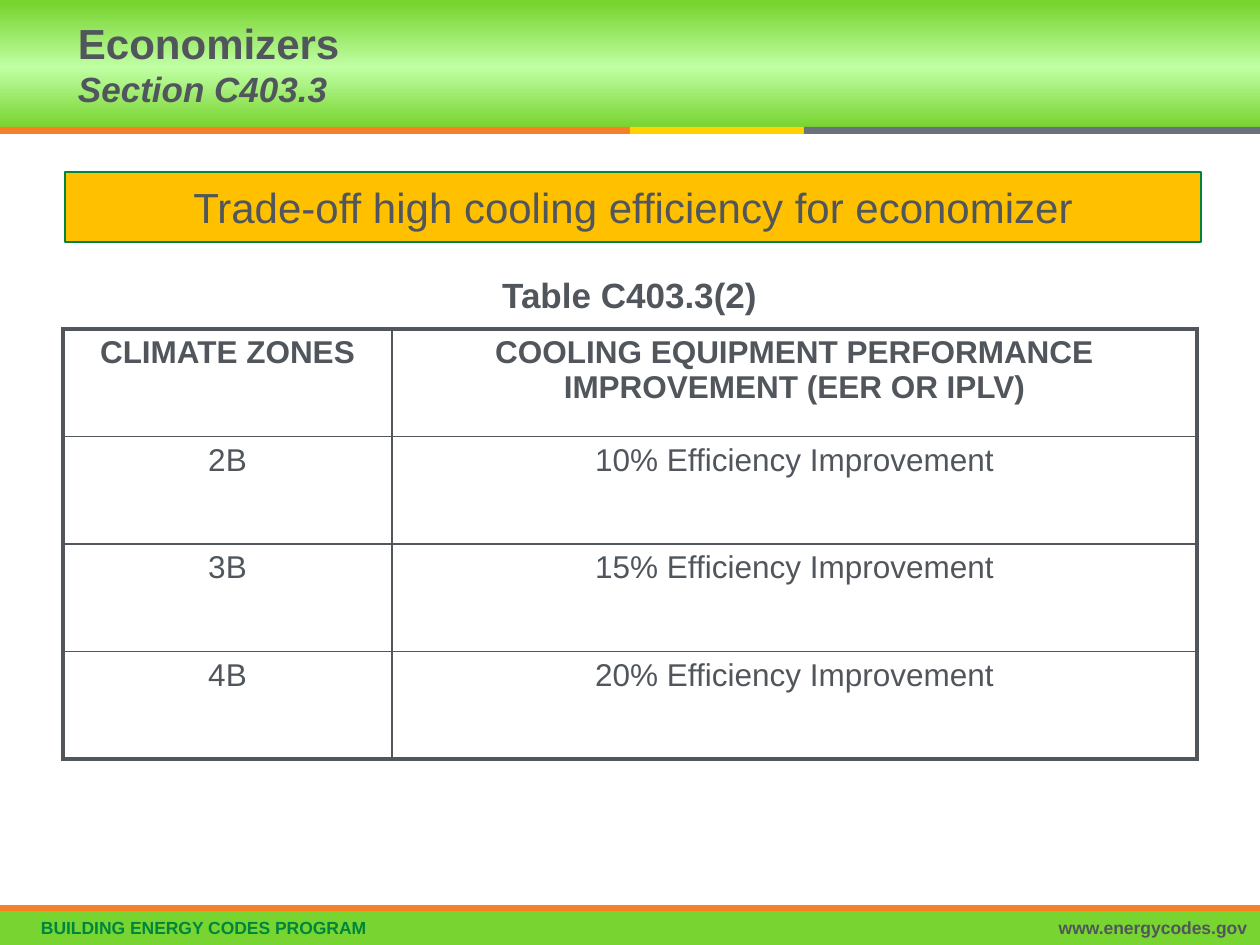
import copy

import lxml.etree
import pptx
import pptx.dml.color
import pptx.enum.shapes
import pptx.enum.text
import pptx.oxml.ns
import pptx.util

EMU_PER_PX = pptx.util.Inches(1) / 126
ALIGN = pptx.enum.text.PP_ALIGN
ANCHOR = pptx.enum.text.MSO_ANCHOR


def px(length):
    return pptx.util.Emu(round(length * EMU_PER_PX))


def color(hex_string):
    return pptx.dml.color.RGBColor.from_string(hex_string)


class SlideBuilder:
    FONT = "Arial"
    TEXT = "50565C"
    GREEN, DARK_GREEN, PALE_GREEN = "78D430", "00853F", "C0FFA4"
    ORANGE, YELLOW, GRAY, AMBER = "F58025", "FFD200", "6A737B", "FFC000"

    def __init__(self, slide):
        self.slide = slide

    def style_run(self, run, size, bold=False, italic=False, hex_string=TEXT):
        run.font.name = self.FONT
        run.font.size = pptx.util.Pt(size)
        run.font.bold = bold
        run.font.italic = italic
        run.font.color.rgb = color(hex_string)

    def bar(self, left, top, width, height, fill, line=None):
        shape = self.slide.shapes.add_shape(
            pptx.enum.shapes.MSO_SHAPE.RECTANGLE,
            px(left), px(top), px(width), px(height))
        shape.shadow.inherit = False
        shape.fill.solid()
        shape.fill.fore_color.rgb = color(fill)
        if line:
            shape.line.color.rgb = color(line)
            shape.line.width = pptx.util.Pt(0.75)
        else:
            shape.line.fill.background()
        return shape

    def gradient_bar(self, left, top, width, height, stops):
        """Vertical gradient, with (percent, colour) stops from the bottom up."""
        fill = self.bar(left, top, width, height, stops[0][1]).fill
        fill.gradient()
        fill.gradient_angle = 90
        first = fill.gradient_stops[0]._gs
        for _ in range(len(stops) - len(fill.gradient_stops)):
            first.addnext(copy.deepcopy(first))
        for stop, (percent, hex_string) in zip(fill.gradient_stops, stops):
            stop.position = percent / 100
            stop.color.rgb = color(hex_string)

    def set_text(self, shape, text, size, align=ALIGN.LEFT, **style):
        frame = shape.text_frame
        frame.word_wrap = True
        frame.vertical_anchor = ANCHOR.MIDDLE
        frame.margin_left = frame.margin_right = 0
        frame.margin_top = frame.margin_bottom = 0
        paragraph = frame.paragraphs[0]
        paragraph.text = text
        paragraph.alignment = align
        for run in paragraph.runs:
            self.style_run(run, size, **style)
        return paragraph

    def label(self, left, top, width, height, text, size, **style):
        box = self.slide.shapes.add_textbox(px(left), px(top), px(width), px(height))
        return self.set_text(box, text, size, **style)

    def cell_borders(self, cell, widths):
        """Draw the left, right, top and bottom borders, with widths in points."""
        properties = cell._tc.get_or_add_tcPr()
        qn = pptx.oxml.ns.qn
        for side, width in zip("LRTB", widths):
            line = lxml.etree.SubElement(
                properties, qn(f"a:ln{side}"), w=str(pptx.util.Pt(width)))
            fill = lxml.etree.SubElement(line, qn("a:solidFill"))
            lxml.etree.SubElement(fill, qn("a:srgbClr"), val=self.TEXT)

    def table(self, left, top, height, column_widths, rows):
        row_count, column_count = len(rows), len(column_widths)
        table = self.slide.shapes.add_table(
            row_count, column_count,
            px(left), px(top), px(sum(column_widths)), px(height)).table
        for column, width in zip(table.columns, column_widths):
            column.width = px(width)
        for r, row in enumerate(rows):
            table.rows[r].height = px(height / row_count)
            for c, text in enumerate(row):
                cell = table.cell(r, c)
                outer_sides = (c == 0, c == column_count - 1,
                               r == 0, r == row_count - 1)
                self.cell_borders(
                    cell, [2.25 if outer else 1 for outer in outer_sides])
                cell.fill.background()
                cell.margin_left = cell.margin_right = px(15)
                cell.margin_top = cell.margin_bottom = px(6)
                paragraph = cell.text_frame.paragraphs[0]
                paragraph.text = text
                paragraph.alignment = ALIGN.CENTER
                self.style_run(paragraph.runs[0], 18, bold=r == 0)


def main():
    presentation = pptx.Presentation()
    presentation.slide_width = px(1260)
    presentation.slide_height = px(945)
    b = SlideBuilder(presentation.slides.add_slide(presentation.slide_layouts[6]))

    b.gradient_bar(0, 0, 1260, 127,
                   [(0, b.GREEN), (47, b.PALE_GREEN), (97, b.GREEN)])
    stripe_left = 0
    for width, fill in ((630, b.ORANGE), (174, b.YELLOW), (456, b.GRAY)):
        b.bar(stripe_left, 127, width, 7, fill)
        stripe_left += width

    title = b.label(78, 0, 727, 127, "Economizers\vSection C403.3", 24, bold=True)
    b.style_run(title.runs[1], 20, bold=True, italic=True)

    banner = b.bar(65, 172, 1136, 70, b.AMBER, line=b.DARK_GREEN)
    b.set_text(banner, "Trade-off high cooling efficiency for economizer", 24,
               align=ALIGN.CENTER)

    b.label(331, 267, 597, 54, "Table C403.3(2)", 20, align=ALIGN.CENTER, bold=True)
    b.table(63, 329, 430, (329, 805), [
        ("CLIMATE ZONES", "COOLING EQUIPMENT PERFORMANCE IMPROVEMENT (EER OR IPLV)"),
        ("2B", "10% Efficiency Improvement"),
        ("3B", "15% Efficiency Improvement"),
        ("4B", "20% Efficiency Improvement"),
    ])

    b.bar(0, 905, 1260, 6, b.ORANGE)
    b.bar(0, 911, 1260, 34, b.GREEN)
    b.label(41, 911, 972, 32, "BUILDING ENERGY CODES PROGRAM", 10,
            bold=True, hex_string=b.DARK_GREEN)
    b.label(755, 911, 492, 32, "www.energycodes.gov", 10,
            align=ALIGN.RIGHT, bold=True)

    presentation.save("out.pptx")


if __name__ == "__main__":
    main()
